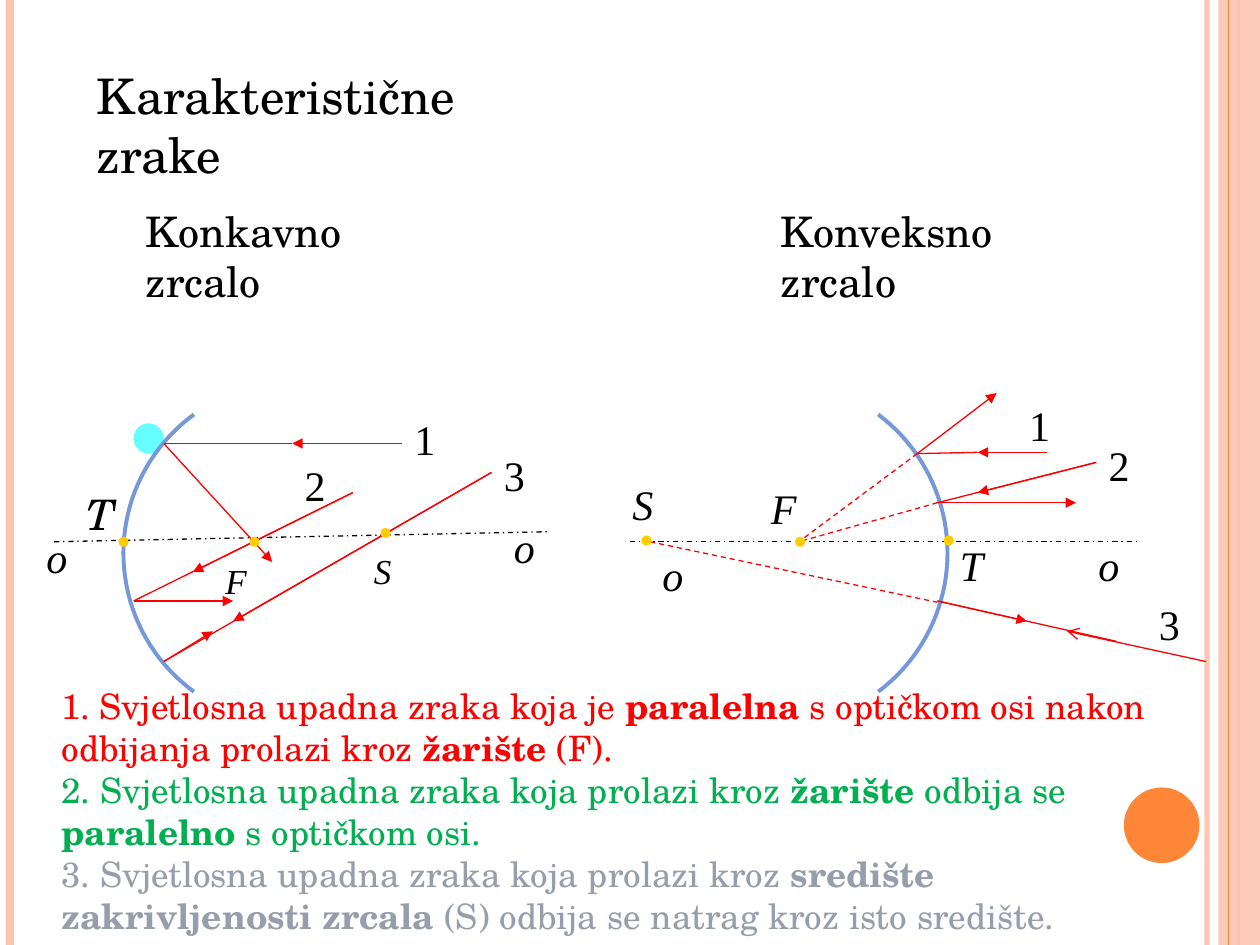
from math import asin, cos, sin

from lxml.etree import SubElement
from pptx import Presentation
from pptx.dml.color import RGBColor
from pptx.enum.dml import MSO_LINE
from pptx.enum.shapes import MSO_CONNECTOR, MSO_SHAPE
from pptx.enum.text import MSO_ANCHOR
from pptx.oxml.ns import qn
from pptx.util import Cm, Pt

COLORS = {
    "black": "000000", "ray": "FF0000", "mirror": "7598D9", "point": "FFCC00",
    "spot": "66FFFF", "green": "00B050", "gray": "969EAB",
    "orange": "FE8637", "peach": "FEC3AE",
}
SCHOLA, TIMES = "TeX Gyre Schola", "Times New Roman"
DASH, AXIS = MSO_LINE.DASH, MSO_LINE.DASH_DOT
SYMBOL = {"name": TIMES, "size": Pt(24), "italic": True}
SMALL = {**SYMBOL, "size": Pt(20)}
NUMBER = {**SYMBOL, "italic": False}


def rgb(name):
    return RGBColor.from_string(COLORS[name])


def length(inches):
    return Cm(2.54 * inches)


def set_opacity(shape, percent):
    color = next(shape._element.spPr.iter(qn("a:srgbClr")))
    SubElement(color, qn("a:alpha")).set("val", str(percent * 1000))


def add_line(slide, box, start, end, color="ray", width=0.75, dash=None, arrow=None):
    left, top = box[:2]
    line = slide.shapes.add_connector(
        MSO_CONNECTOR.STRAIGHT, length(left + start[0]), length(top + start[1]),
        length(left + end[0]), length(top + end[1]))
    line.line.color.rgb = rgb(color)
    line.line.width = Pt(width)
    if dash:
        line.line.dash_style = dash
    if arrow:
        SubElement(line.line._get_or_add_ln(), qn("a:tailEnd")).set("type", arrow)
    SubElement(line._element.spPr, qn("a:effectLst"))
    return line


def add_solid(slide, box, kind, place, color):
    x, y, width, height = place
    shape = slide.shapes.add_shape(
        kind, length(box[0] + x), length(box[1] + y), length(width), length(height))
    shape.shadow.inherit = False
    shape.fill.solid()
    shape.fill.fore_color.rgb = rgb(color)
    shape.line.fill.background()
    return shape


def add_text(slide, box, paragraphs, font, wrap=True, anchor=MSO_ANCHOR.TOP):
    """Each paragraph is (color, text pieces); every second piece is bold."""
    frame = slide.shapes.add_textbox(*map(length, box)).text_frame
    frame.word_wrap = wrap
    frame.vertical_anchor = anchor
    for index, (color, pieces) in enumerate(paragraphs):
        paragraph = frame.paragraphs[0] if index == 0 else frame.add_paragraph()
        for position, piece in enumerate(pieces):
            run = paragraph.add_run()
            run.text = piece
            for name, value in {**font, "bold": position % 2 == 1}.items():
                setattr(run.font, name, value)
            run.font.color.rgb = rgb(color)


def add_mirror(slide, box, apex, sagitta, half_height=1.1, steps=40):
    """Circular arc; a positive sagitta opens to the right."""
    radius = (half_height ** 2 + sagitta ** 2) / (2 * abs(sagitta))
    side = 1 if sagitta > 0 else -1
    limit = asin(half_height / radius)
    angles = [limit * (2 * step / steps - 1) for step in range(steps + 1)]
    points = [(length(box[0] + apex[0] + side * radius * (1 - cos(angle))),
               length(box[1] + apex[1] + radius * sin(angle))) for angle in angles]
    builder = slide.shapes.build_freeform(*points[0])
    builder.add_line_segments(points[1:], close=False)
    mirror = builder.convert_to_shape()
    mirror.shadow.inherit = False
    mirror.fill.background()
    mirror.line.color.rgb = rgb("mirror")
    mirror.line.width = Pt(2.25)


def add_diagram(slide, box, axis, mirror, rays, points, labels):
    add_line(slide, box, *axis, color="black", dash=AXIS)
    add_mirror(slide, box, *mirror)
    for start, end, *style in rays:
        add_line(slide, box, start, end, **(style[0] if style else {}))
    size = 0.08
    for x, y in points:
        add_solid(slide, box, MSO_SHAPE.OVAL, (x - size / 2, y - size / 2, size, size), "point")
    for text, x, y, font in labels:
        add_text(slide, (box[0] + x, box[1] + y, 0.37, 0.5), [("black", [text])], font, wrap=False)


def add_concave(slide, box):
    arrow = {"arrow": "triangle"}
    add_solid(slide, box, MSO_SHAPE.OVAL, (0.81, 0.36, 0.24, 0.24), "spot")
    add_diagram(
        slide, box, axis=((0.18, 1.3), (4.12, 1.22)), mirror=((0.73, 1.39), 0.56),
        rays=[
            # Ray 1
            ((2.94, 0.52), (2.07, 0.52), arrow), ((2.07, 0.52), (1.05, 0.52)),
            ((1.05, 0.52), (1.91, 1.46), arrow),
            # Ray 2
            ((2.55, 0.91), (0.81, 1.77)), ((2.55, 0.91), (1.28, 1.54), arrow),
            ((0.81, 1.77), (1.6, 1.77), arrow),
            # Ray 3
            ((3.65, 0.75), (1.05, 2.25)), ((3.65, 0.75), (1.6, 1.93), arrow),
            ((1.05, 2.25), (1.44, 2.01), arrow),
        ],
        points=[(0.73, 1.3), (1.77, 1.3), (2.81, 1.23)],
        labels=[
            ("1", 2.94, 0.23, NUMBER), ("2", 2.07, 0.6, NUMBER), ("3", 3.65, 0.52, NUMBER),
            ("T", 0.34, 0.83, {**SYMBOL, "name": SCHOLA}), ("F", 1.44, 1.39, SMALL),
            ("S", 2.62, 1.31, SMALL), ("o", 0.02, 1.17, SYMBOL), ("o", 3.73, 1.09, SYMBOL),
        ])


def add_convex(slide, box):
    arrow, dashed = {"arrow": "triangle"}, {"dash": DASH}
    add_diagram(
        slide, box, axis=((0.1, 1.3), (4.12, 1.3)), mirror=((2.62, 1.39), -0.55),
        rays=[
            # Ray 1
            ((3.41, 0.59), (2.86, 0.59), arrow), ((2.86, 0.59), (2.38, 0.6)),
            ((2.38, 0.6), (3.01, 0.12), arrow), ((2.38, 0.6), (1.44, 1.3), dashed),
            # Ray 2
            ((3.8, 0.67), (2.54, 0.99)), ((3.8, 0.67), (2.86, 0.91), arrow),
            ((2.54, 0.99), (1.44, 1.3), dashed), ((2.54, 0.99), (3.64, 0.99), arrow),
            # Ray 3
            ((2.54, 1.77), (3.25, 1.93), arrow), ((0.26, 1.3), (2.54, 1.78), dashed),
            ((4.67, 2.25), (3.57, 2.01), {"arrow": "arrow"}), ((2.54, 1.77), (3.96, 2.09)),
        ],
        points=[(0.23, 1.29), (1.45, 1.3), (2.63, 1.29)],
        labels=[
            ("1", 3.17, 0.12, NUMBER), ("2", 3.8, 0.44, NUMBER), ("3", 4.2, 1.7, NUMBER),
            ("S", 0.02, 0.75, SYMBOL), ("F", 1.12, 0.78, SYMBOL), ("T", 2.62, 1.23, SYMBOL),
            ("o", 0.26, 1.31, SYMBOL), ("o", 3.72, 1.23, SYMBOL),
        ])


def add_border(slide, box):
    height = box[3]
    band = add_solid(slide, box, MSO_SHAPE.RECTANGLE, (9.67, 0, 0.33, height), "peach")
    set_opacity(band, 87)
    stripes = [(0.08, "peach", 4.5, 100), (9.58, "peach", 3, 93),
               (9.75, "orange", 0.75, 100), (9.83, "peach", 1.5, 100)]
    for x, color, width, opacity in stripes:
        stripe = add_line(slide, box, (x, 0), (x, height), color, width)
        if opacity < 100:
            set_opacity(stripe, opacity)
    add_solid(slide, box, MSO_SHAPE.OVAL, (8.92, 6.25, 0.6, 0.6), "orange")


def add_headings(slide, box):
    left, top = box[:2]
    headings = [("Karakteristične zrake", 0, 0, 3.84, 0.57, 28, MSO_ANCHOR.TOP),
                ("Konkavno zrcalo", 0.39, 1.31, 2.67, 0.5, 24, MSO_ANCHOR.MIDDLE),
                ("Konveksno zrcalo", 5.43, 1.31, 2.84, 0.5, 24, MSO_ANCHOR.MIDDLE)]
    for text, x, y, width, height, size, anchor in headings:
        add_text(slide, (left + x, top + y, width, height), [("black", [text])],
                 {"name": SCHOLA, "size": Pt(size)}, anchor=anchor)


def add_rules(slide, box):
    add_text(slide, box, [
        ("ray", ["1. Svjetlosna upadna zraka koja je ", "paralelna",
                 " s optičkom osi nakon odbijanja prolazi kroz ", "žarište", " (F)."]),
        ("green", ["2. Svjetlosna upadna zraka koja prolazi kroz ", "žarište",
                   " odbija se ", "paralelno", " s optičkom osi."]),
        ("gray", ["3. Svjetlosna upadna zraka koja prolazi kroz ",
                  "središte zakrivljenosti zrcala",
                  " (S) odbija se natrag kroz isto središte."]),
    ], {"name": SCHOLA, "size": Pt(20)})


def main():
    presentation = Presentation()
    presentation.slide_width, presentation.slide_height = Cm(25.4), Cm(19.05)
    slide = presentation.slides.add_slide(presentation.slide_layouts[6])
    add_border(slide, (0, 0, 10, 7.5))
    add_concave(slide, (0.25, 3, 4.2, 2.5))
    add_convex(slide, (4.9, 3, 4.7, 2.5))
    add_headings(slide, (0.67, 0.47, 8.3, 1.8))
    add_rules(slide, (0.39, 5.38, 9.14, 2.12))
    presentation.save("out.pptx")


if __name__ == "__main__":
    main()
